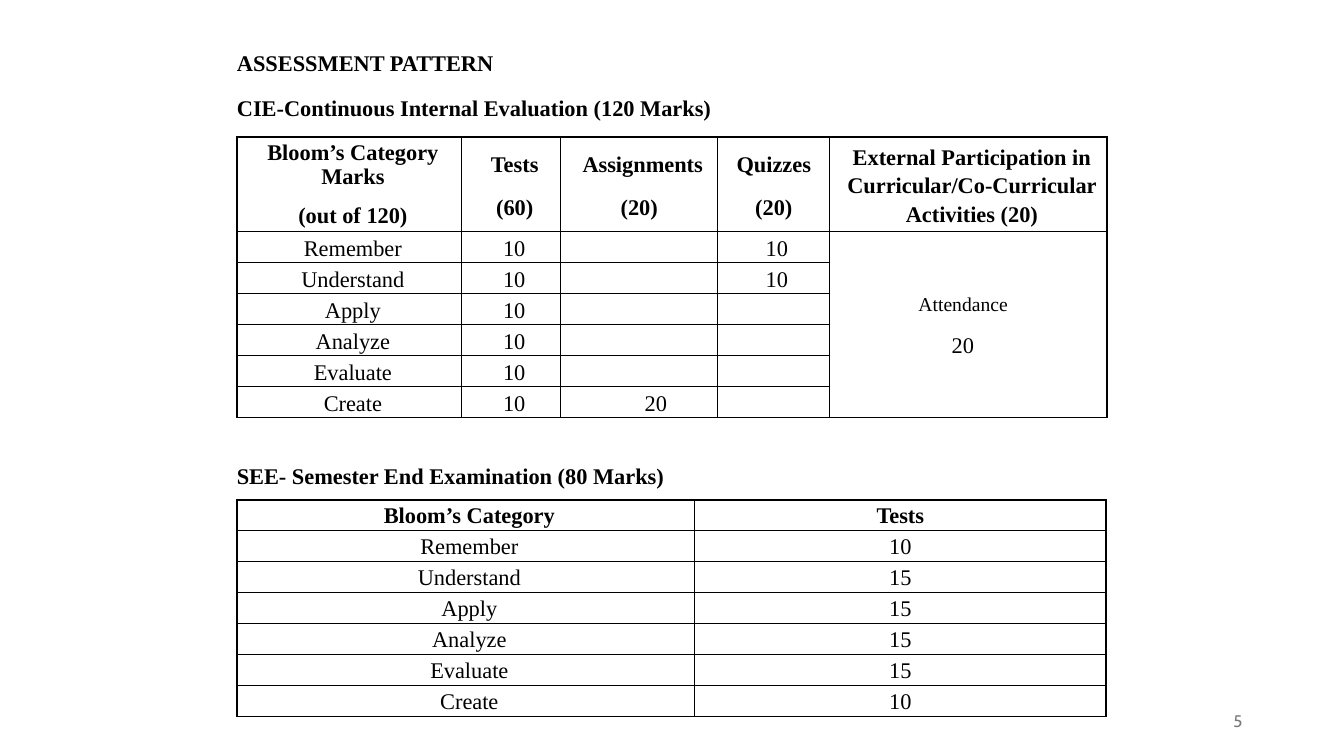
from lxml import etree
from pptx import Presentation
from pptx.dml.color import RGBColor
from pptx.enum.text import MSO_ANCHOR, MSO_AUTO_SIZE, PP_ALIGN
from pptx.oxml import parse_xml
from pptx.oxml.ns import nsdecls, qn
from pptx.util import Inches, Pt

LEFT, CENTER, RIGHT, JUSTIFY = PP_ALIGN.LEFT, PP_ALIGN.CENTER, PP_ALIGN.RIGHT, PP_ALIGN.JUSTIFY
TOP, MIDDLE = MSO_ANCHOR.TOP, MSO_ANCHOR.MIDDLE
GROW = MSO_AUTO_SIZE.SHAPE_TO_FIT_TEXT

COLORS = {"ink": "000000", "number": "797979"}
SERIF, SANS = "Times New Roman", "Cabin"
LEVELS = ["Remember", "Understand", "Apply", "Analyze", "Evaluate", "Create"]
INDENT, NUDGE, WIDE = 0.07, 0.06, 0.33


def line(text, indent=0, align=CENTER, size=16, bold=False, spacing=1.15):
    return {"text": text, "indent": indent, "size": size, "bold": bold,
            "format": {"alignment": align, "line_spacing": spacing, "space_after": Pt(10)}}


def style_font(font, name, size, color, bold=False):
    for attribute, value in {"name": name, "size": Pt(size), "bold": bold}.items():
        setattr(font, attribute, value)
    font.color.rgb = RGBColor.from_string(COLORS[color])


def write_lines(frame, lines):
    for i, entry in enumerate(lines):
        paragraph = frame.add_paragraph() if i else frame.paragraphs[0]
        for attribute, value in entry["format"].items():
            setattr(paragraph, attribute, value)
        properties = paragraph._p.get_or_add_pPr()
        properties.set("marL", str(Inches(entry["indent"])))
        properties.set("indent", "0")
        run = paragraph.add_run()
        run.text = entry["text"]
        style_font(run.font, SERIF, entry["size"], "ink", entry["bold"])


def write_heading(shape, lines):
    frame = shape.text_frame
    for attribute, value in {"word_wrap": True, "vertical_anchor": TOP, "auto_size": GROW}.items():
        setattr(frame, attribute, value)
    write_lines(frame, lines)


def add_borders(cell):
    properties = cell._tc.get_or_add_tcPr()
    for position, side in enumerate(("lnL", "lnR", "lnT", "lnB")):
        properties.insert(position, parse_xml(
            f'<a:{side} {nsdecls("a")} w="{Pt(1)}"><a:solidFill>'
            f'<a:srgbClr val="{COLORS["ink"]}"/></a:solidFill></a:{side}>'))


def add_grid(slide, top, widths, heights, rows, anchor):
    table = slide.shapes.add_table(
        len(rows), len(widths), Inches(2.35), Inches(top),
        Inches(sum(widths)), Inches(sum(heights))).table
    table.first_row = table.horz_banding = False
    for column, width in zip(table.columns, widths):
        column.width = Inches(width)
    for row, height, contents in zip(table.rows, heights, rows):
        row.height = Inches(height)
        for cell, lines in zip(row.cells, contents):
            cell.margin_left = cell.margin_right = cell.margin_top = cell.margin_bottom = 0
            cell.vertical_anchor = anchor
            cell.fill.background()
            add_borders(cell)
            write_lines(cell.text_frame, lines)
            if not lines:
                # Keep an empty cell from stretching its row
                end = etree.SubElement(cell.text_frame.paragraphs[0]._p, qn("a:endParaRPr"))
                end.set("sz", "1200")
    return table


def add_slide_number(slide, number):
    box = slide.shapes.add_textbox(Inches(9.42), Inches(6.95), Inches(3), Inches(0.4))
    box.text_frame.word_wrap = True
    box.text_frame.vertical_anchor = MIDDLE
    paragraph = box.text_frame.paragraphs[0]
    paragraph.alignment = RIGHT
    run = paragraph.add_run()
    run.text = number
    style_font(run.font, SANS, 12, "number")


def internal_rows():
    def header(*texts, indents=(INDENT, INDENT), spacing=1.15):
        return [line(text, indent, bold=True, spacing=spacing)
                for text, indent in zip(texts, indents)]

    rows = [[
        header("Bloom’s Category Marks", "(out of 120)", spacing=1.0),
        header("Tests", "(60)"),
        header("Assignments", "(20)", indents=(INDENT, 0)),
        header("Quizzes", "(20)", indents=(0, 0)),
        header("External Participation in Curricular/Co-Curricular Activities (20)"),
    ]]
    assignments = {"Create": [line("20", WIDE)]}
    quizzes = {level: [line("10", NUDGE)] for level in LEVELS[:2]}
    attendance = {LEVELS[0]: [line("Attendance", 0.88, LEFT, 14),
                              line("20", 0.88 + WIDE, LEFT)]}
    for level in LEVELS:
        rows.append([[line(level, INDENT)], [line("10", NUDGE)], assignments.get(level, []),
                     quizzes.get(level, []), attendance.get(level, [])])
    return rows


def semester_rows():
    rows = [[[line("Bloom’s Category", INDENT, bold=True)], [line("Tests", bold=True)]]]
    for level, marks in zip(LEVELS, (10, 15, 15, 15, 15, 10)):
        rows.append([[line(level, INDENT)], [line(str(marks))]])
    return rows


def main():
    deck = Presentation()
    deck.slide_width, deck.slide_height = Inches(13.33), Inches(7.5)
    slide = deck.slides.add_slide(deck.slide_layouts[5])

    # Headings
    title = slide.shapes.title
    title.left, title.top, title.width, title.height = map(Inches, (2.25, 0.4, 6.15, 0.84))
    write_heading(title, [
        line("ASSESSMENT PATTERN", align=LEFT, bold=True),
        line("CIE-Continuous Internal Evaluation (120 Marks)", align=JUSTIFY, bold=True)])
    semester = slide.shapes.add_textbox(Inches(2.25), Inches(4.5), Inches(6.15), Inches(0.39))
    write_heading(semester, [
        line("SEE- Semester End Examination (80 Marks)", align=LEFT, bold=True)])

    # Internal evaluation, with one attendance cell beside all levels
    internal = add_grid(slide, 1.36, [2.23, 0.98, 1.56, 1.11, 2.75],
                        [0.82] + [0.21] * 6, internal_rows(), MIDDLE)
    internal.cell(1, 4).merge(internal.cell(6, 4))

    # Semester examination
    add_grid(slide, 4.96, [4.54, 4.08], [0.26] * 7, semester_rows(), TOP)

    add_slide_number(slide, "5")
    deck.save("out.pptx")


if __name__ == "__main__":
    main()
